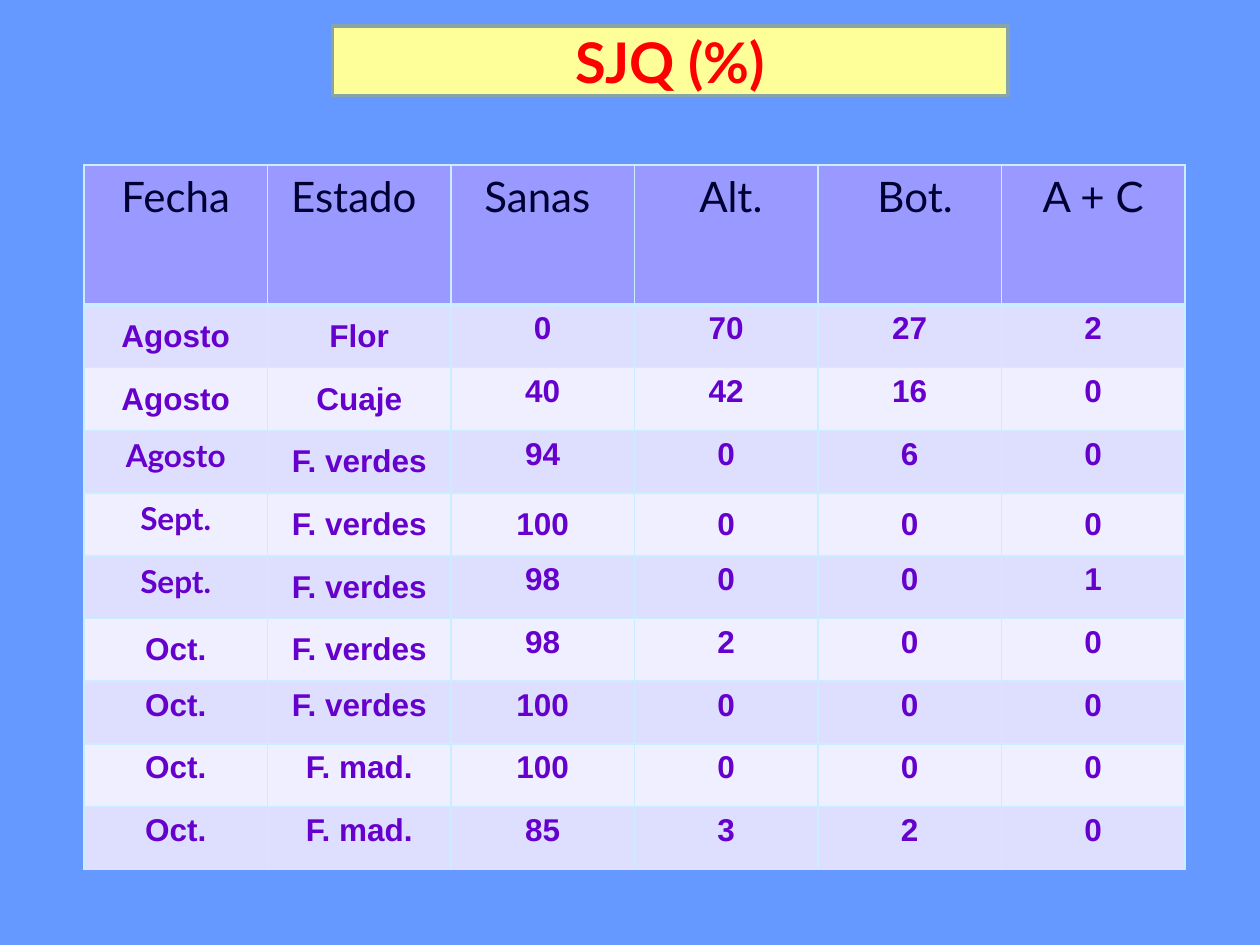
from dataclasses import dataclass

from lxml import etree
from pptx import Presentation
from pptx.dml.color import RGBColor
from pptx.enum.shapes import MSO_SHAPE
from pptx.enum.text import MSO_ANCHOR, PP_ALIGN
from pptx.oxml.ns import qn
from pptx.slide import Slide
from pptx.table import _Cell
from pptx.text.text import _Paragraph
from pptx.util import Pt

RECTANGLE = MSO_SHAPE.RECTANGLE
TOP, MIDDLE = MSO_ANCHOR.TOP, MSO_ANCHOR.MIDDLE
CENTER = PP_ALIGN.CENTER

BORDER_COLOR = "CCECFF"
HEADER_FILL = "9999FF"
BAND_FILLS = ("DEDEFF", "EFEFFF")
COLUMN_WIDTH = 104.88
HEADER_HEIGHT = 79.92
ROW_HEIGHT = 35.84


@dataclass(frozen=True)
class TextStyle:
    font: str
    size: float
    color: str
    bold: bool


@dataclass(frozen=True)
class SampleRow:
    values: tuple[str, ...]
    middle_columns: tuple[int, ...] = ()
    date_font: str = "Arial"


TITLE_STYLE = TextStyle("Lato", 32, "FF0000", True)
HEADER_STYLE = TextStyle("Lato", 24, "000033", False)

HEADERS = ("Fecha", "Estado ", "Sanas ", " Alt.", " Bot.", "A + C")
SAMPLES = (
    SampleRow(("Agosto", "Flor", "0", "70", "27", "2"), (0, 1)),
    SampleRow(("Agosto", "Cuaje", "40", "42", "16", "0"), (0, 1)),
    SampleRow(("Agosto", "F. verdes", "94", "0", "6", "0"), (1,), "Lato"),
    SampleRow(("Sept.", "F. verdes", "100", "0", "0", "0"), (1, 2, 3, 4, 5), "Lato"),
    SampleRow(("Sept.", "F. verdes", "98", "0", "0", "1"), (1,), "Lato"),
    SampleRow(("Oct.", "F. verdes", "98", "2", "0", "0"), (0, 1)),
    SampleRow(("Oct.", "F. verdes", "100", "0", "0", "0")),
    SampleRow(("Oct.", "F. mad.", "100", "0", "0", "0")),
    SampleRow(("Oct.", "F. mad.", "85", "3", "2", "0")),
)


def rgb(value: str) -> RGBColor:
    return RGBColor.from_string(value)


def write_text(paragraph: _Paragraph, text: str, style: TextStyle) -> None:
    paragraph.text = text
    paragraph.alignment = CENTER
    paragraph.font.name = style.font
    paragraph.font.size = Pt(style.size)
    paragraph.font.bold = style.bold
    paragraph.font.color.rgb = rgb(style.color)


def add_borders(cell: _Cell, bottom_width: float) -> None:
    properties = cell._tc.get_or_add_tcPr()
    widths = {"a:lnL": 1, "a:lnR": 1, "a:lnT": 1, "a:lnB": bottom_width}
    for tag, width in widths.items():
        line = etree.SubElement(properties, qn(tag), w=str(Pt(width)))
        fill = etree.SubElement(line, qn("a:solidFill"))
        etree.SubElement(fill, qn("a:srgbClr"), val=BORDER_COLOR)


def fill_cell(cell: _Cell, text: str, style: TextStyle, fill: str,
              anchor: MSO_ANCHOR = TOP, bottom_width: float = 1) -> None:
    add_borders(cell, bottom_width)
    cell.fill.solid()
    cell.fill.fore_color.rgb = rgb(fill)
    cell.vertical_anchor = anchor
    write_text(cell.text_frame.paragraphs[0], text, style)


def add_sample_table(slide: Slide) -> None:
    table = slide.shapes.add_table(
        len(SAMPLES) + 1, len(HEADERS), Pt(48), Pt(94.4),
        Pt(COLUMN_WIDTH * len(HEADERS)),
        Pt(HEADER_HEIGHT + ROW_HEIGHT * len(SAMPLES)),
    ).table
    for column in table.columns:
        column.width = Pt(COLUMN_WIDTH)
    for row in table.rows:
        row.height = Pt(ROW_HEIGHT)
    table.rows[0].height = Pt(HEADER_HEIGHT)

    for column_index, header in enumerate(HEADERS):
        fill_cell(table.cell(0, column_index), header, HEADER_STYLE,
                  HEADER_FILL, bottom_width=3)
    for row_index, sample in enumerate(SAMPLES):
        fill = BAND_FILLS[row_index % 2]
        for column_index, value in enumerate(sample.values):
            font = sample.date_font if column_index == 0 else "Arial"
            anchor = MIDDLE if column_index in sample.middle_columns else TOP
            fill_cell(table.cell(row_index + 1, column_index), value,
                      TextStyle(font, 18, "6600CC", True), fill, anchor)


def add_title(slide: Slide) -> None:
    title = slide.shapes.add_shape(RECTANGLE, Pt(190), Pt(15), Pt(386), Pt(39.6))
    title.shadow.inherit = False
    title.fill.solid()
    title.fill.fore_color.rgb = rgb("FFFF99")
    title.line.color.rgb = rgb("89A4A7")
    title.line.width = Pt(2)
    title.text_frame.word_wrap = True
    title.text_frame.vertical_anchor = MIDDLE
    write_text(title.text_frame.paragraphs[0], "SJQ (%)", TITLE_STYLE)


def main() -> None:
    presentation = Presentation()
    presentation.slide_width = Pt(720)
    presentation.slide_height = Pt(540)
    slide = presentation.slides.add_slide(presentation.slide_layouts[6])
    slide.background.fill.solid()
    slide.background.fill.fore_color.rgb = rgb("6699FF")
    add_sample_table(slide)
    add_title(slide)
    presentation.save("out.pptx")


if __name__ == "__main__":
    main()
